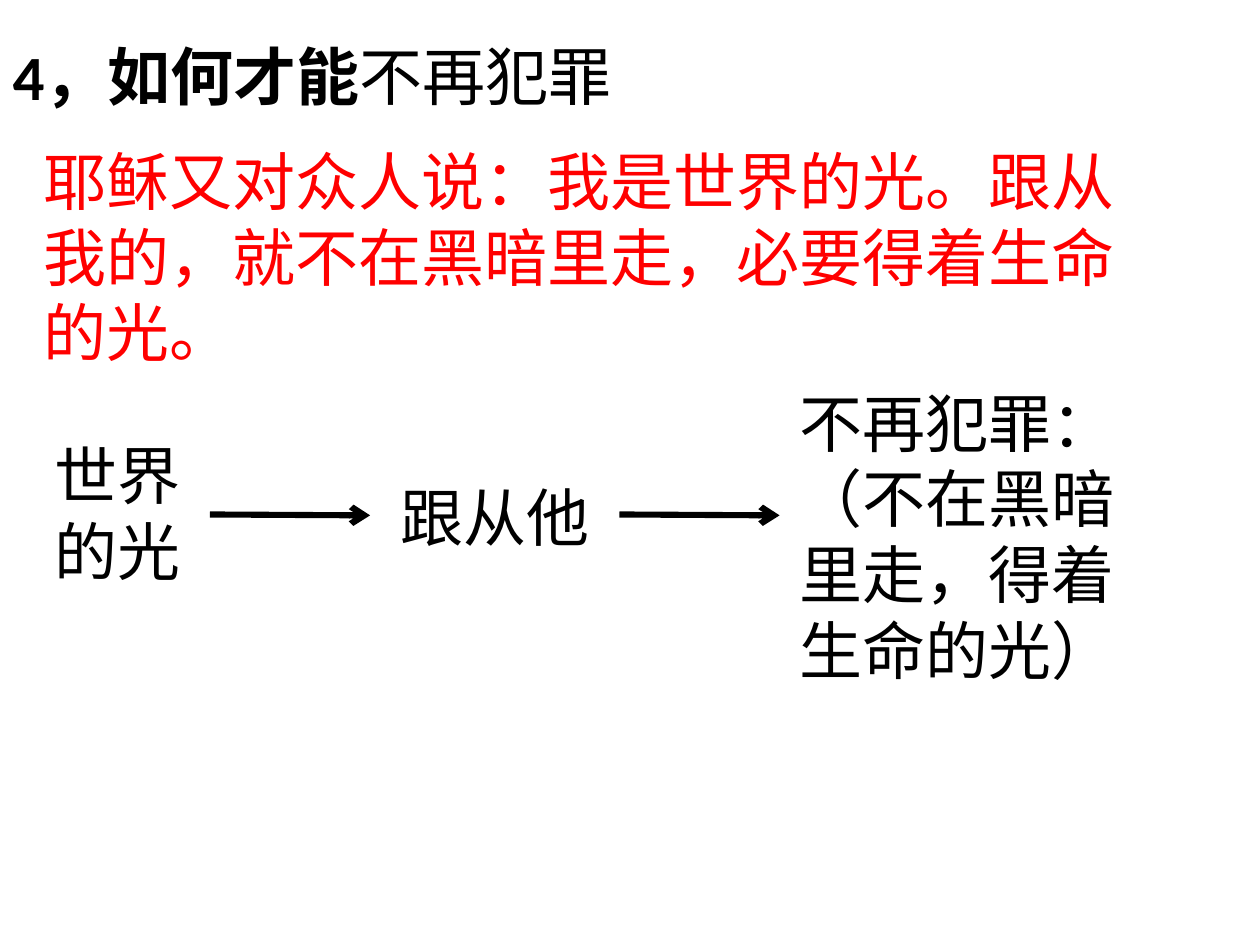
from lxml.etree import SubElement
from pptx import Presentation
from pptx.dml.color import RGBColor
from pptx.enum.lang import MSO_LANGUAGE_ID
from pptx.enum.shapes import MSO_CONNECTOR
from pptx.enum.text import MSO_ANCHOR, MSO_AUTO_SIZE, PP_ALIGN
from pptx.oxml.ns import qn
from pptx.util import Pt

THEME = {
    "font": "Calibri",
    "size": 36,
    "ink": RGBColor(0, 0, 0),
    "verse": RGBColor(255, 0, 0),
    "line": 3.5,
}

TITLE = [("4，如何才能", True), ("不再犯罪", False)]
TITLE_BOX = (0, 18, 696, 51)
VERSE = "耶稣又对众人说：我是世界的光。跟从我的，就不在黑暗里走，必要得着生命的光。"
VERSE_BOX = (18, 78, 660, 138)
STEPS = [
    ("世界的光", (24, 246, 90, 94)),
    ("跟从他", (222, 270, 132, 51)),
    ("不再犯罪：（不在黑暗里走，得着生命的光）", (450, 216, 210, 181)),
]
ARROW_STARTS = [120, 354]
ARROW_LENGTH = 91.5
ARROW_Y = 294


def write_text(sp, runs, box, color=THEME["ink"]):
    sp.left, sp.top, sp.width, sp.height = map(Pt, box)
    tf = sp.text_frame
    tf.word_wrap = True
    tf.auto_size = MSO_AUTO_SIZE.NONE
    tf.vertical_anchor = MSO_ANCHOR.TOP
    p = tf.paragraphs[0]
    p.alignment = PP_ALIGN.LEFT
    for text, bold in runs:
        r = p.add_run()
        r.text = text
        r.font.name = THEME["font"]
        r.font.size = Pt(THEME["size"])
        r.font.bold = bold
        r.font.color.rgb = color
        r.font.language_id = MSO_LANGUAGE_ID.SIMPLIFIED_CHINESE


def add_text(s, text, box, **style):
    sp = s.shapes.add_textbox(*map(Pt, box))
    write_text(sp, [(text, False)], box, **style)


def add_arrow(s, x):
    line = s.shapes.add_connector(
        MSO_CONNECTOR.STRAIGHT,
        Pt(x), Pt(ARROW_Y), Pt(x + ARROW_LENGTH), Pt(ARROW_Y + 0.5),
    )
    line.line.color.rgb = THEME["ink"]
    line.line.width = Pt(THEME["line"])
    SubElement(line.line._get_or_add_ln(), qn("a:tailEnd"), type="arrow")
    SubElement(line._element.spPr, qn("a:effectLst"))


def main():
    prs = Presentation()
    prs.slide_width, prs.slide_height = Pt(720), Pt(540)
    s = prs.slides.add_slide(prs.slide_layouts[5])
    write_text(s.shapes.title, TITLE, TITLE_BOX)
    add_text(s, VERSE, VERSE_BOX, color=THEME["verse"])
    for text, box in STEPS:
        add_text(s, text, box)
    for x in ARROW_STARTS:
        add_arrow(s, x)
    prs.save("out.pptx")


if __name__ == "__main__":
    main()
